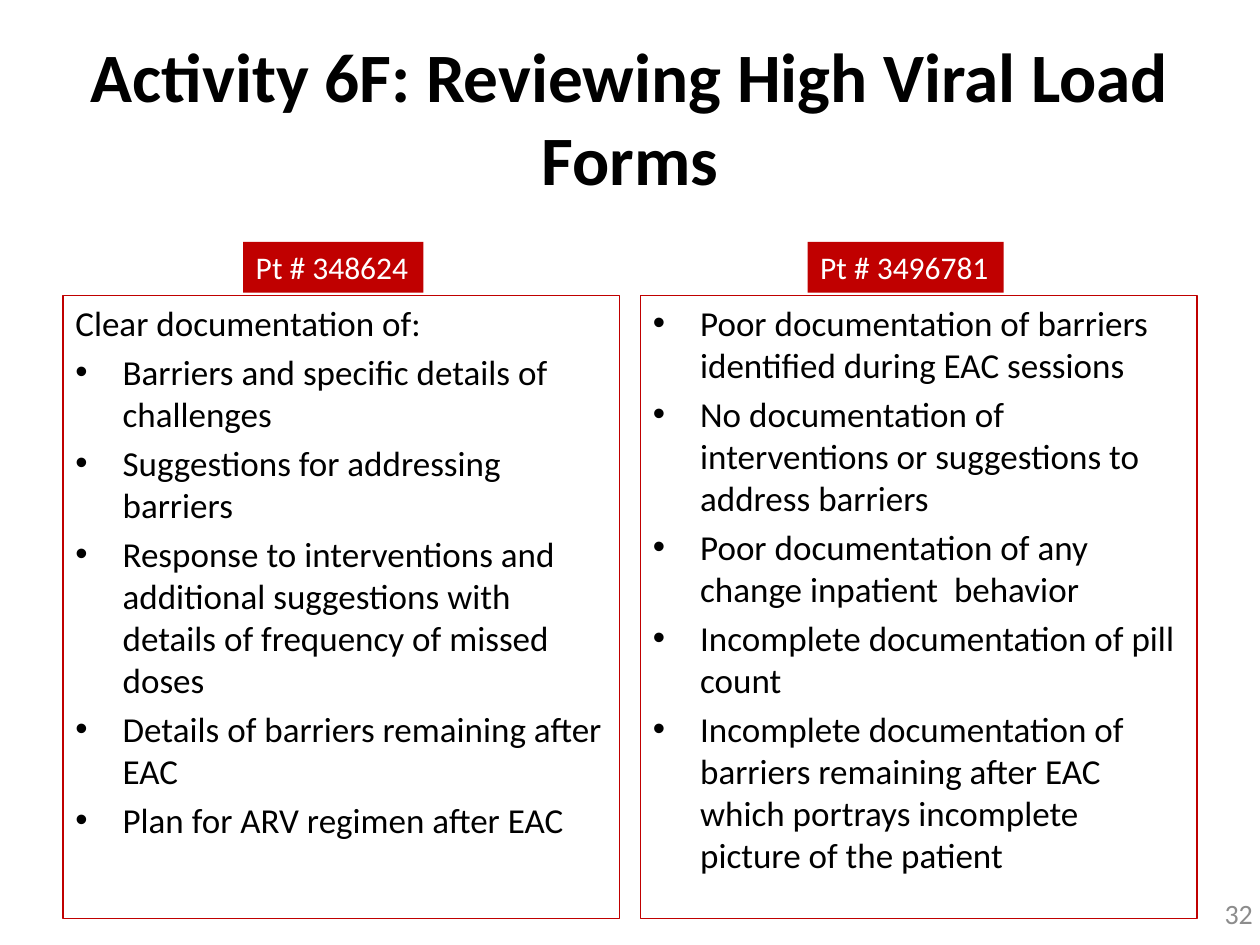
from collections import namedtuple
from dataclasses import dataclass

from lxml.etree import SubElement
from pptx import Presentation
from pptx.dml.color import RGBColor
from pptx.enum.shapes import MSO_SHAPE
from pptx.enum.text import MSO_ANCHOR, PP_ALIGN
from pptx.oxml.ns import qn
from pptx.util import Pt

Box = namedtuple("Box", "left top width height")


@dataclass(frozen=True)
class Theme:
    font: str = "Calibri"
    text: RGBColor = RGBColor(0x00, 0x00, 0x00)
    accent: RGBColor = RGBColor(0xC0, 0x00, 0x00)
    on_accent: RGBColor = RGBColor(0xFF, 0xFF, 0xFF)
    muted: RGBColor = RGBColor(0x8C, 0x8C, 0x8C)
    title_size: float = 39.6
    body_size: float = 20
    label_size: float = 18
    number_size: float = 16
    indent: float = 27
    space_before: float = 4


THEME = Theme()


def format_paragraph(paragraph, size, color, align=PP_ALIGN.LEFT, bold=False):
    paragraph.alignment = align
    for run in paragraph.runs:
        run.font.name = THEME.font
        run.font.size = Pt(size)
        run.font.bold = bold
        run.font.color.rgb = color


def add_bullet(paragraph):
    properties = paragraph._p.get_or_add_pPr()
    properties.set("marL", str(Pt(THEME.indent)))
    properties.set("indent", str(-Pt(THEME.indent)))
    SubElement(properties, qn("a:buFont"), typeface="Arial")
    SubElement(properties, qn("a:buChar"), char="•")


def add_text(slide, box, text, size, color, align, bold=False):
    shape = slide.shapes.add_textbox(*map(Pt, box))
    frame = shape.text_frame
    frame.word_wrap = True
    frame.vertical_anchor = MSO_ANCHOR.MIDDLE
    frame.text = text
    format_paragraph(frame.paragraphs[0], size, color, align, bold)


def add_rectangle(slide, box):
    shape = slide.shapes.add_shape(MSO_SHAPE.RECTANGLE, *map(Pt, box))
    shape.shadow.inherit = False
    return shape


def add_label(slide, box, text):
    shape = add_rectangle(slide, box)
    shape.fill.solid()
    shape.fill.fore_color.rgb = THEME.accent
    shape.line.fill.background()
    frame = shape.text_frame
    frame.word_wrap = False
    frame.vertical_anchor = MSO_ANCHOR.TOP
    frame.text = text
    format_paragraph(frame.paragraphs[0], THEME.label_size, THEME.on_accent)


def add_findings(slide, box, bullets, lead=None):
    shape = add_rectangle(slide, box)
    shape.fill.background()
    shape.line.color.rgb = THEME.accent
    shape.line.width = Pt(0.75)
    frame = shape.text_frame
    frame.word_wrap = True
    frame.vertical_anchor = MSO_ANCHOR.TOP
    lines = [lead, *bullets] if lead else bullets
    frame.text = "\n".join(lines)
    for index, paragraph in enumerate(frame.paragraphs):
        format_paragraph(paragraph, THEME.body_size, THEME.text)
        paragraph.space_before = Pt(THEME.space_before)
        if index or not lead:
            add_bullet(paragraph)


def add_patient(slide, box, patient):
    """Place a patient label above its framed list of findings."""
    label_height, gap = 29.1, 1.4
    list_top = label_height + gap
    add_label(slide, Box(box.left + patient["label_offset"], box.top,
                         patient["label_width"], label_height), patient["label"])
    add_findings(slide, Box(box.left, box.top + list_top, box.width,
                            box.height - list_top),
                 patient["bullets"], patient.get("lead"))


PATIENTS = [
    {
        "label": "Pt # 348624",
        "label_offset": 103,
        "label_width": 103,
        "lead": "Clear documentation of:",
        "bullets": [
            "Barriers and specific details of challenges",
            "Suggestions for addressing barriers",
            "Response to interventions and additional suggestions with "
            "details of frequency of missed doses",
            "Details of barriers remaining after EAC",
            "Plan for ARV regimen after EAC",
        ],
    },
    {
        "label": "Pt # 3496781",
        "label_offset": 95.5,
        "label_width": 112,
        "bullets": [
            "Poor documentation of barriers identified during EAC sessions",
            "No documentation of interventions or suggestions to address barriers",
            "Poor documentation of any change inpatient  behavior",
            "Incomplete documentation of pill count",
            "Incomplete documentation of barriers remaining after EAC "
            "which portrays incomplete picture of the patient",
        ],
    },
]


def main():
    presentation = Presentation()
    presentation.slide_width, presentation.slide_height = Pt(720), Pt(540)
    slide = presentation.slides.add_slide(presentation.slide_layouts[6])

    # Title
    add_text(slide, Box(36, 21.6, 648, 90),
             "Activity 6F: Reviewing High Viral Load Forms",
             THEME.title_size, THEME.text, PP_ALIGN.CENTER, bold=True)

    # Two patient columns
    area = Box(36, 138.2, 648, 386.7)
    gutter = 12
    width = (area.width - gutter) / len(PATIENTS)
    for index, patient in enumerate(PATIENTS):
        left = area.left + index * (width + gutter)
        add_patient(slide, Box(left, area.top, width, area.height), patient)

    # Slide number
    add_text(slide, Box(555, 507.6, 168, 28.8), "32",
             THEME.number_size, THEME.muted, PP_ALIGN.RIGHT)

    presentation.save("out.pptx")


if __name__ == "__main__":
    main()
